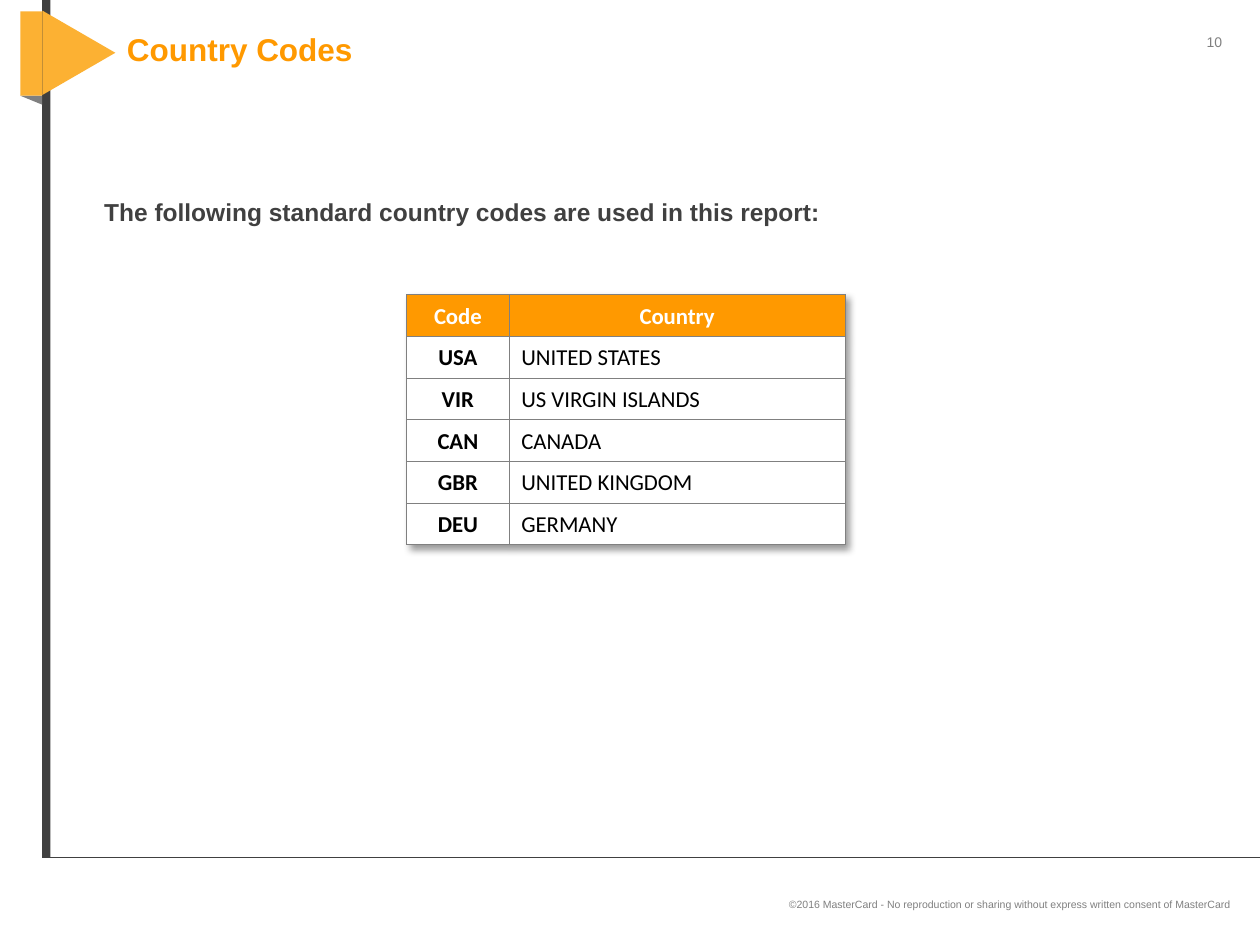
import pptx
import pptx.util
import pptx.dml.color
import pptx.enum.shapes
import pptx.enum.text
import pptx.oxml
import pptx.oxml.ns

Cm = pptx.util.Cm
Pt = pptx.util.Pt
ALIGN = pptx.enum.text.PP_ALIGN
ANCHOR = pptx.enum.text.MSO_ANCHOR
SHAPE = pptx.enum.shapes.MSO_SHAPE

COLORS = {"orange": "FF9900", "amber": "FCB133", "dark": "404040", "gray": "808080",
          "white": "FFFFFF", "black": "000000"}
TITLE = "Country Codes"
INTRO = "The following standard country codes are used in this report:"
PAGE_NUMBER = "10"
COPYRIGHT = ("©2016 MasterCard - No reproduction or sharing without "
             "express written consent of MasterCard")
COUNTRIES = [
    ("Code", "Country"),
    ("USA", "UNITED STATES"),
    ("VIR", "US VIRGIN ISLANDS"),
    ("CAN", "CANADA"),
    ("GBR", "UNITED KINGDOM"),
    ("DEU", "GERMANY"),
]
DECORATIONS = [
    (SHAPE.RECTANGLE, (0.85, 0, 0.17, 17.29), 0, "dark"),
    (SHAPE.RIGHT_TRIANGLE, (0.41, 1.93, 0.44, 0.18), 180, "gray"),
    (SHAPE.ISOSCELES_TRIANGLE, (0.74, 0.33, 1.7, 1.47), 90, "amber"),
    (SHAPE.RECTANGLE, (0.41, 0.23, 0.44, 1.7), 0, "amber"),
]
COLUMN_WIDTHS = [2.06, 6.78]
ROW_HEIGHT = 0.84
TABLE_LEFT, TABLE_TOP = 8.2, 5.94
NAMESPACE = 'xmlns:a="http://schemas.openxmlformats.org/drawingml/2006/main"'


def rgb(name):
    return pptx.dml.color.RGBColor.from_string(COLORS[name])


def write_text(frame, text, size, color, font="Arial", bold=False, align=ALIGN.LEFT,
               line_spacing=None, space_after=0):
    paragraph = frame.paragraphs[0]
    paragraph.alignment = align
    paragraph.space_after = Pt(space_after)
    if line_spacing:
        paragraph.line_spacing = Pt(line_spacing)
    run = paragraph.add_run()
    run.text = text
    run.font.name = font
    run.font.size = Pt(size)
    run.font.bold = bold
    run.font.color.rgb = rgb(color)


def add_text(slide, box, text, anchor=ANCHOR.TOP, wrap=True, **text_format):
    frame = slide.shapes.add_textbox(*map(Cm, box)).text_frame
    frame.word_wrap = wrap
    frame.vertical_anchor = anchor
    write_text(frame, text, **text_format)


def add_decorations(slide):
    for kind, box, rotation, color in DECORATIONS:
        shape = slide.shapes.add_shape(kind, *map(Cm, box))
        shape.rotation = rotation
        shape.shadow.inherit = False
        shape.fill.solid()
        shape.fill.fore_color.rgb = rgb(color)
        shape.line.fill.background()
    line = slide.shapes.add_connector(pptx.enum.shapes.MSO_CONNECTOR.STRAIGHT,
                                      Cm(0.85), Cm(17.29), Cm(25.4), Cm(17.29))
    line.line.color.rgb = rgb("dark")
    line.line.width = Pt(0.75)
    line._element.spPr.append(pptx.oxml.parse_xml(f"<a:effectLst {NAMESPACE}/>"))


def add_borders(cell):
    properties = cell._tc.get_or_add_tcPr()
    for index, side in enumerate(("lnL", "lnR", "lnT", "lnB")):
        properties.insert(index, pptx.oxml.parse_xml(
            f'<a:{side} {NAMESPACE} w="{Pt(0.5)}"><a:solidFill>'
            f'<a:srgbClr val="{COLORS["gray"]}"/></a:solidFill></a:{side}>'))


def add_country_table(slide):
    table = slide.shapes.add_table(
        len(COUNTRIES), len(COLUMN_WIDTHS), Cm(TABLE_LEFT), Cm(TABLE_TOP),
        Cm(sum(COLUMN_WIDTHS)), Cm(ROW_HEIGHT * len(COUNTRIES))).table
    table.horz_banding = False
    table._tbl.tblPr.insert(0, pptx.oxml.parse_xml(
        f'<a:effectLst {NAMESPACE}><a:outerShdw blurRad="50800" dist="38100" dir="2700000" '
        f'algn="tl" rotWithShape="0"><a:srgbClr val="{COLORS["black"]}">'
        '<a:alpha val="40000"/></a:srgbClr></a:outerShdw></a:effectLst>'))
    for column, width in zip(table.columns, COLUMN_WIDTHS):
        column.width = Cm(width)
    for row_index, names in enumerate(COUNTRIES):
        table.rows[row_index].height = Cm(ROW_HEIGHT)
        header = row_index == 0
        for column_index, text in enumerate(names):
            cell = table.cell(row_index, column_index)
            emphasized = header or column_index == 0
            cell.margin_left = Cm(0.03 if emphasized else 0.25)
            cell.margin_right = cell.margin_top = Cm(0.03)
            cell.margin_bottom = 0
            cell.vertical_anchor = ANCHOR.MIDDLE
            cell.fill.solid()
            cell.fill.fore_color.rgb = rgb("orange" if header else "white")
            add_borders(cell)
            write_text(cell.text_frame, text, size=13, font="Calibri", bold=emphasized,
                       color="white" if header else "black",
                       align=ALIGN.CENTER if emphasized else ALIGN.LEFT)


def main():
    presentation = pptx.Presentation()
    presentation.slide_width, presentation.slide_height = Cm(25.4), Cm(19.05)
    slide = presentation.slides.add_slide(presentation.slide_layouts[6])
    add_text(slide, (24.05, 0.56, 0.86, 0.61), PAGE_NUMBER, wrap=False,
             size=8, color="gray", align=ALIGN.CENTER)
    add_text(slide, (0.28, 17.55, 24.77, 1.37), COPYRIGHT, anchor=ANCHOR.MIDDLE,
             size=6, color="gray", align=ALIGN.RIGHT)
    add_decorations(slide)
    add_text(slide, (2.31, 0.23, 20.12, 1.7), TITLE, anchor=ANCHOR.MIDDLE,
             size=18, color="orange", bold=True, line_spacing=16)
    add_text(slide, (1.85, 3.84, 19.79, 11.91), INTRO,
             size=14, color="dark", bold=True, space_after=6)
    add_country_table(slide)
    presentation.save("out.pptx")


if __name__ == "__main__":
    main()
